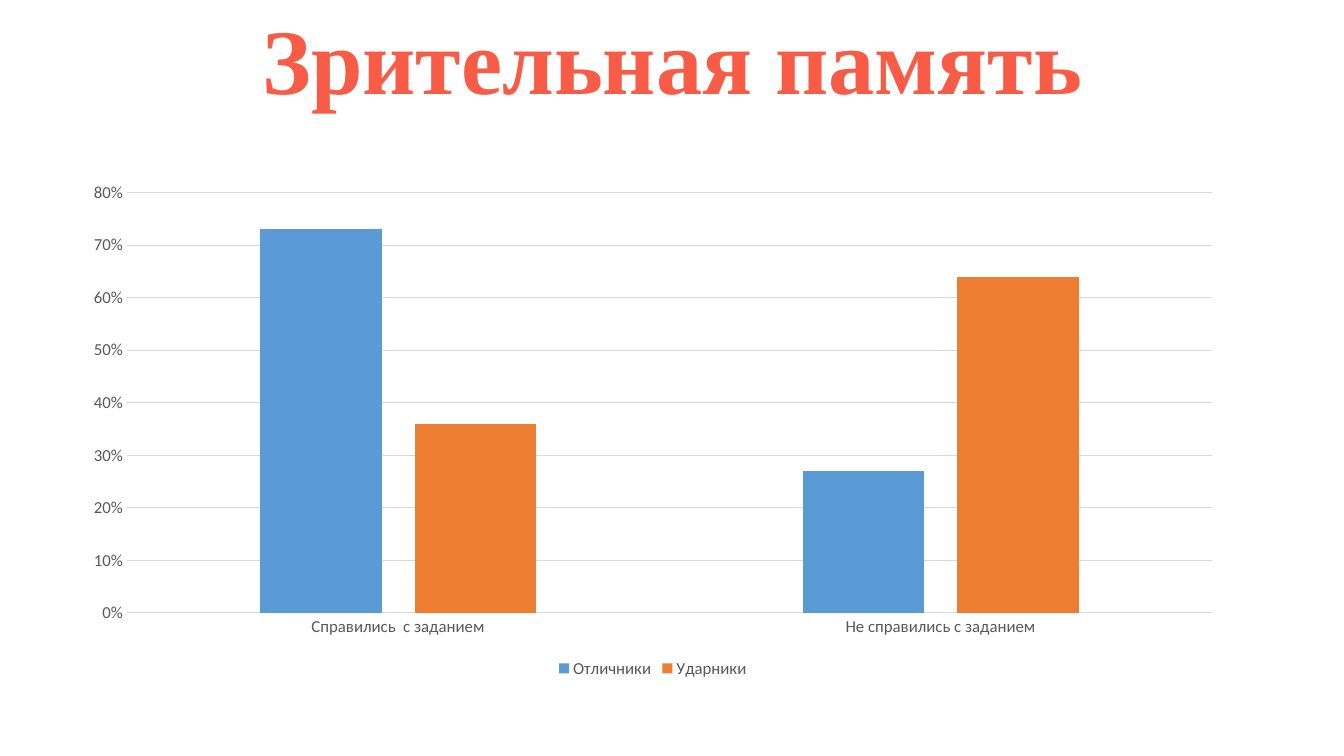
from pptx import Presentation
from pptx.chart.data import CategoryChartData
from pptx.dml.color import RGBColor
from pptx.enum.chart import XL_CHART_TYPE, XL_LEGEND_POSITION, XL_TICK_MARK
from pptx.enum.text import MSO_ANCHOR, PP_ALIGN
from pptx.util import Inches, Pt

COLUMNS = XL_CHART_TYPE.COLUMN_CLUSTERED
BOTTOM = XL_LEGEND_POSITION.BOTTOM
NO_TICKS = XL_TICK_MARK.NONE
MIDDLE = MSO_ANCHOR.MIDDLE
CENTER = PP_ALIGN.CENTER

CORAL = RGBColor(0xF9, 0x5C, 0x46)
BLUE = RGBColor(0x5B, 0x9B, 0xD5)
ORANGE = RGBColor(0xED, 0x7D, 0x31)
GRAY_TEXT = RGBColor(0x59, 0x59, 0x59)
GRAY_LINE = RGBColor(0xD9, 0xD9, 0xD9)

CATEGORIES = ["Справились  с заданием", "Не справились с заданием"]
RESULTS = [
    ("Отличники", (0.73, 0.27), BLUE),
    ("Ударники", (0.36, 0.64), ORANGE),
]


def format_font(font, name, size, color, bold=False):
    font.name = name
    font.size = Pt(size)
    font.color.rgb = color
    font.bold = bold


def format_line(line):
    line.color.rgb = GRAY_LINE
    line.width = Pt(0.75)


def add_title(page, text, left, top, width, height):
    title = page.shapes.title
    title.left, title.top = Inches(left), Inches(top)
    title.width, title.height = Inches(width), Inches(height)
    frame = title.text_frame
    frame.word_wrap = True
    frame.vertical_anchor = MIDDLE
    para = frame.paragraphs[0]
    para.alignment = CENTER
    para.line_spacing = 0.9
    span = para.add_run()
    span.text = text
    format_font(span.font, "Times New Roman", 66, CORAL, bold=True)


def add_results_chart(page, left, top, width, height):
    data = CategoryChartData(number_format="0%")
    data.categories = CATEGORIES
    for name, values, _ in RESULTS:
        data.add_series(name, values)
    chart = page.shapes.add_chart(
        COLUMNS, Inches(left), Inches(top), Inches(width), Inches(height), data
    ).chart
    chart.has_title = False
    format_font(chart.font, "Calibri", 12, GRAY_TEXT)

    plot = chart.plots[0]
    plot.gap_width = 219
    plot.overlap = -27
    plot.vary_by_categories = False
    for series, (_, _, color) in zip(plot.series, RESULTS):
        series.format.fill.solid()
        series.format.fill.fore_color.rgb = color

    for axis in (chart.category_axis, chart.value_axis):
        axis.major_tick_mark = axis.minor_tick_mark = NO_TICKS
        format_font(axis.tick_labels.font, "Calibri", 12, GRAY_TEXT)
    format_line(chart.category_axis.format.line)

    value_axis = chart.value_axis
    value_axis.minimum_scale, value_axis.maximum_scale = 0, 0.8
    value_axis.major_unit = 0.1
    value_axis.format.line.fill.background()
    value_axis.has_major_gridlines = True
    format_line(value_axis.major_gridlines.format.line)
    value_axis.tick_labels.number_format = "0%"
    value_axis.tick_labels.number_format_is_linked = False

    chart.has_legend = True
    chart.legend.position = BOTTOM
    chart.legend.include_in_layout = False
    format_font(chart.legend.font, "Calibri", 12, GRAY_TEXT)


def main():
    deck = Presentation()
    deck.slide_width, deck.slide_height = Inches(13.33), Inches(7.5)
    page = deck.slides.add_slide(deck.slide_layouts[5])
    add_title(page, "Зрительная память", 0.92, 0.23, 11.5, 0.83)
    add_results_chart(page, 0.7, 1.71, 11.55, 5.06)
    deck.save("out.pptx")


if __name__ == "__main__":
    main()
